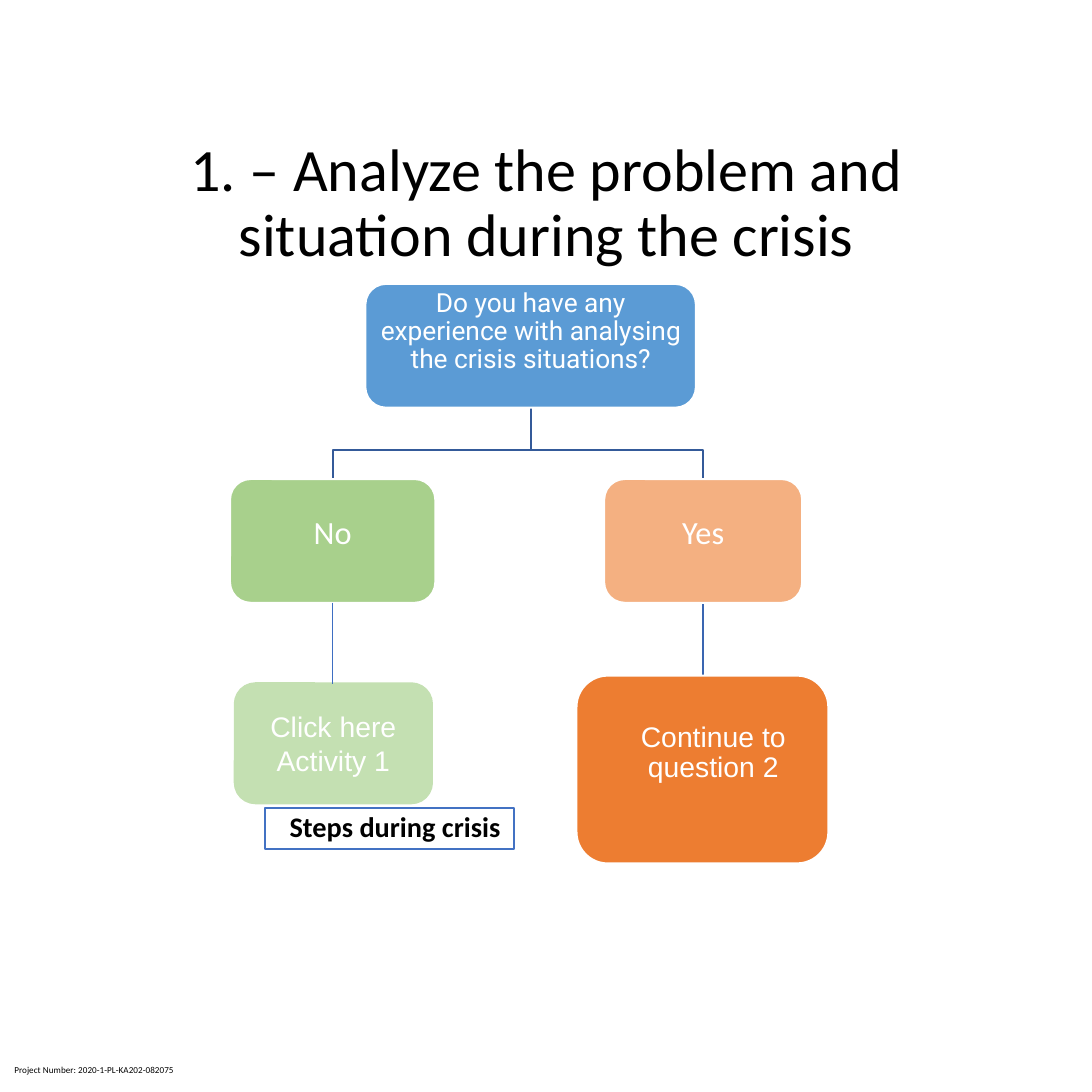
from dataclasses import dataclass

from lxml.etree import SubElement
from pptx import Presentation
from pptx.dml.color import RGBColor
from pptx.enum.shapes import MSO_CONNECTOR, MSO_SHAPE
from pptx.enum.text import MSO_ANCHOR, MSO_AUTO_SIZE, PP_ALIGN
from pptx.oxml.ns import qn
from pptx.util import Inches, Pt


@dataclass(frozen=True)
class Theme:
    white: str = "FFFFFF"
    black: str = "000000"
    question: str = "5B9BD5"
    no: str = "A8D08C"
    yes: str = "F4B081"
    proceed: str = "ED7D31"
    activity: str = "C4E0B2"
    steps_line: str = "4372C3"
    fork_line: str = "345A99"
    yes_line: str = "3A66B1"
    no_line: str = "3E6EC2"
    body_font: str = "Calibri"
    question_font: str = "Roboto"
    action_font: str = "Arial"
    title_size: float = 29.7
    answer_size: float = 16
    action_size: float = 14
    question_size: float = 13
    footer_size: float = 4.5


THEME = Theme()


@dataclass(frozen=True)
class Box:
    left: float
    top: float
    width: float
    height: float

    @property
    def center(self):
        return self.left + self.width / 2

    @property
    def bottom(self):
        return self.top + self.height

    def inner(self, left, top, width, height):
        return Box(self.left + left, self.top + top, width, height)

    def lengths(self):
        return [Inches(n) for n in (self.left, self.top, self.width, self.height)]


def color(value):
    return RGBColor.from_string(value)


def write(frame, lines, font, size, ink, insets, align=PP_ALIGN.CENTER,
          anchor=MSO_ANCHOR.MIDDLE, spacing=0.9, bold=False):
    frame.word_wrap = True
    frame.auto_size = MSO_AUTO_SIZE.NONE
    frame.vertical_anchor = anchor
    (frame.margin_left, frame.margin_top,
     frame.margin_right, frame.margin_bottom) = [Inches(n) for n in insets]
    for index, line in enumerate(lines):
        para = frame.add_paragraph() if index else frame.paragraphs[0]
        para.text = line
        para.alignment = align
        para.line_spacing = spacing
        para.font.name = font
        para.font.size = Pt(size)
        para.font.bold = bold
        para.font.color.rgb = color(ink)


def add_node(page, box, fill, lines, font, size, insets=(0.01, 0.01, 0.01, 0.1),
             kind=MSO_SHAPE.ROUNDED_RECTANGLE, line=THEME.white, line_width=1,
             ink=THEME.white, **text_style):
    node = page.shapes.add_shape(kind, *box.lengths())
    node.shadow.inherit = False
    node.fill.solid()
    node.fill.fore_color.rgb = color(fill)
    node.line.color.rgb = color(line)
    node.line.width = Pt(line_width)
    write(node.text_frame, lines, font, size, ink, insets, **text_style)
    return node


def add_fork(page, parent, child):
    middle = child.top - 0.2
    points = [(parent.center, middle), (child.center, middle), (child.center, child.top)]
    builder = page.shapes.build_freeform(Inches(parent.center), Inches(parent.bottom))
    builder.add_line_segments([(Inches(x), Inches(y)) for x, y in points], close=False)
    fork = builder.convert_to_shape()
    fork.shadow.inherit = False
    fork.fill.background()
    fork.line.color.rgb = color(THEME.fork_line)
    fork.line.width = Pt(1)


def add_drop(page, parent, child, ink, width):
    x = Inches(parent.center)
    drop = page.shapes.add_connector(
        MSO_CONNECTOR.STRAIGHT, x, Inches(parent.bottom), x, Inches(child.top))
    drop.line.color.rgb = color(ink)
    drop.line.width = Pt(width)
    SubElement(drop._element.spPr, qn("a:effectLst"))


def place_title(page, box):
    title = page.shapes.title
    title.left, title.top, title.width, title.height = box.lengths()
    write(title.text_frame, ["1. – Analyze the problem and situation during the crisis"],
          THEME.body_font, THEME.title_size, THEME.black, (0.1, 0.05, 0.1, 0.19),
          anchor=MSO_ANCHOR.BOTTOM)


def place_decision_tree(page, box):
    question = box.inner(0.93, 0, 2.27, 0.85)
    no = box.inner(0, 1.34, 1.41, 0.85)
    yes = box.inner(2.57, 1.34, 1.36, 0.85)
    proceed = box.inner(2.38, 2.69, 1.73, 1.29)
    steps = box.inner(0.24, 3.6, 1.71, 0.28)
    activity = box.inner(0.04, 2.75, 1.34, 0.81)

    add_drop(page, yes, proceed, THEME.yes_line, 1)
    for answer in (yes, no):
        add_fork(page, question, answer)

    add_node(page, question, THEME.question,
             ["Do you have any experience with analysing the crisis situations?"],
             THEME.question_font, THEME.question_size, (0.01, 0.01, 0.01, 0.2))
    add_node(page, no, THEME.no, ["No"], THEME.body_font, THEME.answer_size,
             kind=MSO_SHAPE.FLOWCHART_ALTERNATE_PROCESS)
    add_node(page, yes, THEME.yes, ["Yes"], THEME.body_font, THEME.answer_size)
    add_node(page, proceed, THEME.proceed, ["Continue to question 2"],
             THEME.action_font, THEME.action_size, (0.16, 0.01, 0.01, 0.23))
    label = add_node(page, steps, THEME.white, ["Steps during crisis"],
                     THEME.body_font, THEME.action_size, (0.04, 0.01, 0.09, 0.01),
                     kind=MSO_SHAPE.RECTANGLE, line=THEME.steps_line,
                     ink=THEME.black, align=PP_ALIGN.RIGHT, bold=True)
    fill_color = label._element.spPr.find(qn("a:solidFill")).find(qn("a:srgbClr"))
    SubElement(fill_color, qn("a:alpha")).set("val", "89000")
    add_node(page, activity, THEME.activity, ["Click here", "Activity 1"],
             THEME.action_font, THEME.action_size, (0.1, 0.05, 0.1, 0.05),
             line=THEME.activity, line_width=2, spacing=1.0)
    add_drop(page, no, activity, THEME.no_line, 0.75)


def place_footer(page, box):
    footer = page.shapes.add_textbox(*box.lengths())
    write(footer.text_frame, ["Project Number: 2020-1-PL-KA202-082075"],
          THEME.body_font, THEME.footer_size, THEME.black, (0.1, 0.05, 0.1, 0.05),
          align=PP_ALIGN.LEFT, anchor=MSO_ANCHOR.TOP, spacing=1.0)


def main():
    deck = Presentation()
    deck.slide_width = deck.slide_height = Inches(7.5)
    page = deck.slides.add_slide(deck.slide_layouts.get_by_name("Title Only"))
    place_title(page, Box(0.52, 1.22, 6.47, 0.82))
    place_decision_tree(page, Box(1.58, 1.95, 4.11, 3.98))
    place_footer(page, Box(0, 7.26, 1.31, 0.18))
    deck.save("out.pptx")


if __name__ == "__main__":
    main()
